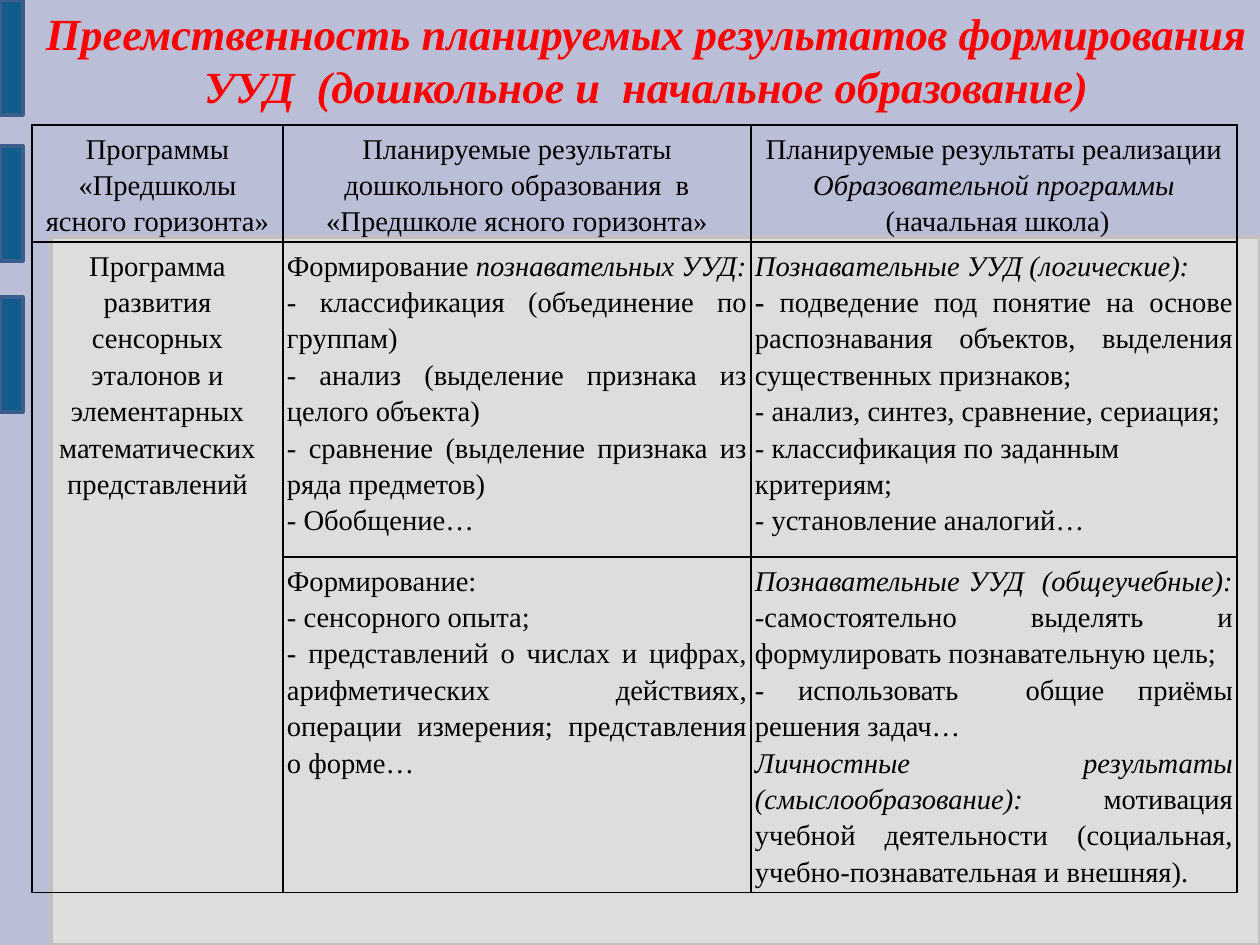
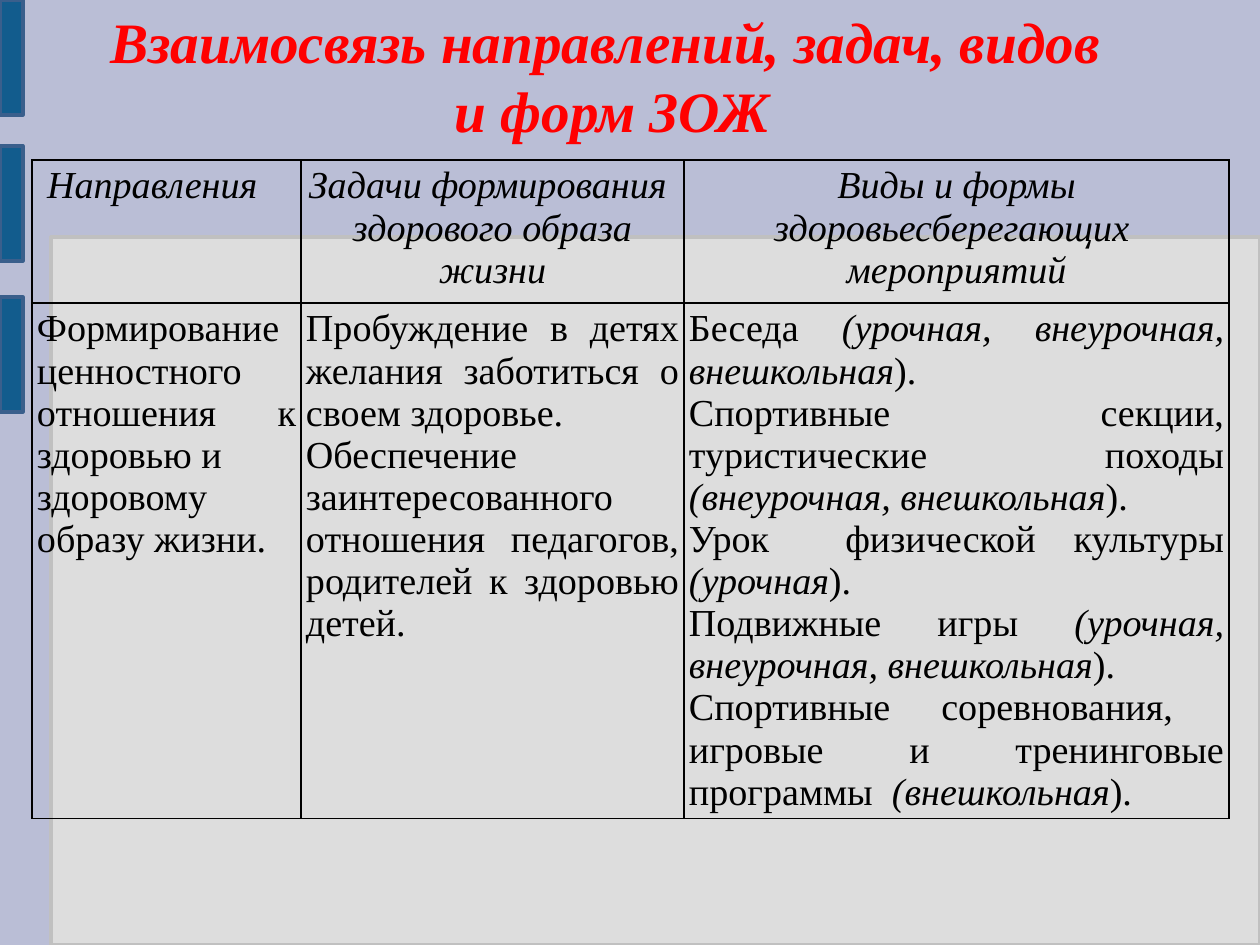
from dataclasses import dataclass

from lxml.etree import SubElement
from pptx import Presentation
from pptx.dml.color import RGBColor
from pptx.enum.shapes import MSO_SHAPE as Shape
from pptx.enum.text import MSO_ANCHOR as Anchor, MSO_AUTO_SIZE as AutoSize, PP_ALIGN as Align
from pptx.oxml.ns import qn
from pptx.util import Pt

PX = 8000  # EMU; 114.3 px to the inch
SLIDE_SIZE = (1260, 945)


@dataclass(frozen=True)
class Theme:
    font: str = "Times New Roman"
    background: str = "BABED6"
    panel: str = "DDDDDD"
    panel_line: str = "C0C0C0"
    tab: str = "125C8D"
    tab_line: str = "3A5F8C"
    title: str = "FF0000"
    text: str = "000000"
    border: str = "000000"
    shape_line: int = 2
    table_line: int = 1


THEME = Theme()
PANEL = (51, 237, 1209, 708)
TABS = [(0, top, 23, 115) for top in (0, 146, 297)]


def centered(*lines):
    return [(Align.CENTER, line) for line in lines]


def justified(*lines):
    return [(Align.JUSTIFY, line) for line in lines]


def left(*lines):
    return [(Align.LEFT, line) for line in lines]


# In cell text, * switches italic on and off, ^ switches bold.
SLIDES = [
    {
        "title": ["Преемственность планируемых результатов формирования "
                  "УУД  (дошкольное и  начальное образование)"],
        "title_box": (32, 0, 1228, 119),
        "title_size": 28,
        "title_wrap": True,
        "table_at": (32, 125),
        "columns": [251, 468, 486],
        "rows": [115, 315, 335],
        "text": {"size": 18, "spacing": 1.15, "inset": 4},
        "merges": [((1, 0), (2, 0))],
        "cells": [
            [
                centered("Программы «Предшколы ясного горизонта»"),
                centered("Планируемые результаты дошкольного образования  в "
                         "«Предшколе ясного горизонта»"),
                centered("Планируемые результаты реализации *Образовательной программы*",
                         " (начальная школа)"),
            ],
            [
                centered("Программа развития сенсорных эталонов и элементарных "
                         "математических представлений"),
                justified("Формирование *познавательных УУД:*",
                          "- классификация (объединение по группам)",
                          "- анализ (выделение признака из целого объекта)",
                          "- сравнение (выделение признака из ряда предметов)",
                          "- Обобщение…"),
                justified("*Познавательные УУД (логические):*",
                          "^- ^подведение под понятие на основе распознавания объектов, "
                          "выделения существенных признаков;",
                          "- анализ, синтез, сравнение, сериация;")
                + left("- классификация по заданным критериям;",
                       "- установление аналогий…"),
            ],
            [
                [],
                justified("Формирование:",
                          "- сенсорного опыта;",
                          "- представлений о числах и цифрах, арифметических действиях, "
                          "операции измерения; представления о форме…"),
                justified("*Познавательные УУД  (общеучебные): *",
                          "-самостоятельно выделять и формулировать познавательную цель;",
                          "- использовать  общие приёмы решения задач…",
                          "*Личностные результаты (смыслообразование): * мотивация учебной "
                          "деятельности (социальная, учебно-познавательная и внешняя)."),
            ],
        ],
    },
    {
        "title": ["Взаимосвязь направлений, задач, видов ", "и форм ЗОЖ"],
        "title_box": (94, 0, 1037, 150),
        "title_size": 36,
        "title_wrap": False,
        "table_at": (32, 160),
        "columns": [269, 383, 545],
        "rows": [143, 514],
        "text": {"size": 24, "spacing": 1.0, "inset": 5},
        "merges": [],
        "cells": [
            [
                centered("*Направления   *"),
                centered("*Задачи формирования  здорового образа жизни*"),
                centered("*Виды и формы здоровьесберегающих  мероприятий*"),
            ],
            [
                justified("Формирование ценностного отношения к здоровью и",
                          "здоровому образу жизни."),
                justified("Пробуждение в детях желания заботиться о своем здоровье.",
                          "Обеспечение заинтересованного отношения педагогов, родителей "
                          "к здоровью детей."),
                justified("Беседа *(урочная, внеурочная, внешкольная*). ",
                          "Спортивные секции, туристические походы "
                          "*(внеурочная, внешкольная*).",
                          "Урок  физической культуры *(урочная*).",
                          "Подвижные игры *(урочная, внеурочная, внешкольная*).",
                          "Спортивные соревнования,  игровые и тренинговые программы  "
                          "*(внешкольная*)."),
            ],
        ],
    },
]


def emu(lengths):
    return [length * PX for length in lengths]


def color(value):
    return RGBColor.from_string(value)


def set_all(target, **values):
    for name, value in values.items():
        setattr(target, name, value)


def add_run(paragraph, text, size, ink, bold, italic):
    run = paragraph.add_run()
    run.text = text
    set_all(run.font, name=THEME.font, size=Pt(size), bold=bold, italic=italic)
    run.font.color.rgb = color(ink)


def add_paragraphs(frame, count):
    """Return count paragraphs of the frame, the first being the existing one."""
    return [frame.paragraphs[0]] + [frame.add_paragraph() for _ in range(count - 1)]


def decorate_layout(layout, slide):
    """Draw the panel and side tabs on a slide, then move them to its layout."""
    parts = [(PANEL, THEME.panel, THEME.panel_line)]
    parts += [(box, THEME.tab, THEME.tab_line) for box in TABS]
    for index, (box, fill, line) in enumerate(parts):
        shape = slide.shapes.add_shape(Shape.RECTANGLE, *emu(box))
        shape.shadow.inherit = False
        shape.fill.solid()
        shape.fill.fore_color.rgb = color(fill)
        shape.line.color.rgb = color(line)
        shape.line.width = Pt(THEME.shape_line)
        layout.shapes.element.insert(2 + index, shape.element)


def add_title(slide, content):
    title = slide.shapes.title
    set_all(title, **dict(zip(("left", "top", "width", "height"), emu(content["title_box"]))))
    frame = title.text_frame
    set_all(frame, word_wrap=content["title_wrap"], auto_size=AutoSize.NONE,
            vertical_anchor=Anchor.MIDDLE)
    for paragraph, line in zip(add_paragraphs(frame, len(content["title"])), content["title"]):
        paragraph.alignment = Align.CENTER
        add_run(paragraph, line, content["title_size"], THEME.title, True, True)


def set_borders(cell):
    properties = cell._tc.get_or_add_tcPr()
    for side in ("lnL", "lnR", "lnT", "lnB"):
        line = SubElement(properties, qn(f"a:{side}"), w=str(Pt(THEME.table_line)))
        fill = SubElement(line, qn("a:solidFill"))
        SubElement(fill, qn("a:srgbClr"), val=THEME.border)


def fill_cell(cell, paragraphs, size, spacing, inset):
    sides = ("left", "right", "top", "bottom")
    set_all(cell, **{f"margin_{side}": inset * PX for side in sides})
    set_borders(cell)
    cell.fill.background()
    targets = add_paragraphs(cell.text_frame, len(paragraphs))
    for paragraph, (alignment, text) in zip(targets, paragraphs):
        set_all(paragraph, alignment=alignment, line_spacing=spacing)
        for bold, section in enumerate(text.split("^")):
            for italic, part in enumerate(section.split("*")):
                if part:
                    add_run(paragraph, part, size, THEME.text, bold % 2 == 1, italic % 2 == 1)


def add_table(slide, content):
    columns, rows = content["columns"], content["rows"]
    box = (*content["table_at"], sum(columns), sum(rows))
    table = slide.shapes.add_table(len(rows), len(columns), *emu(box)).table
    set_all(table, first_row=False, horz_banding=False)
    for column, width in zip(table.columns, emu(columns)):
        column.width = width
    for row, height in zip(table.rows, emu(rows)):
        row.height = height
    for row_index, row in enumerate(content["cells"]):
        for column_index, paragraphs in enumerate(row):
            fill_cell(table.cell(row_index, column_index), paragraphs, **content["text"])
    for first, last in content["merges"]:
        table.cell(*first).merge(table.cell(*last))


def main():
    presentation = Presentation()
    presentation.slide_width, presentation.slide_height = emu(SLIDE_SIZE)
    background = presentation.slide_master.background.fill
    background.solid()
    background.fore_color.rgb = color(THEME.background)
    layout = presentation.slide_layouts.get_by_name("Title Only")
    slides = [presentation.slides.add_slide(layout) for _ in SLIDES]
    decorate_layout(layout, slides[0])
    for slide, content in zip(slides, SLIDES):
        add_table(slide, content)
        add_title(slide, content)
    presentation.save("out.pptx")


if __name__ == "__main__":
    main()
